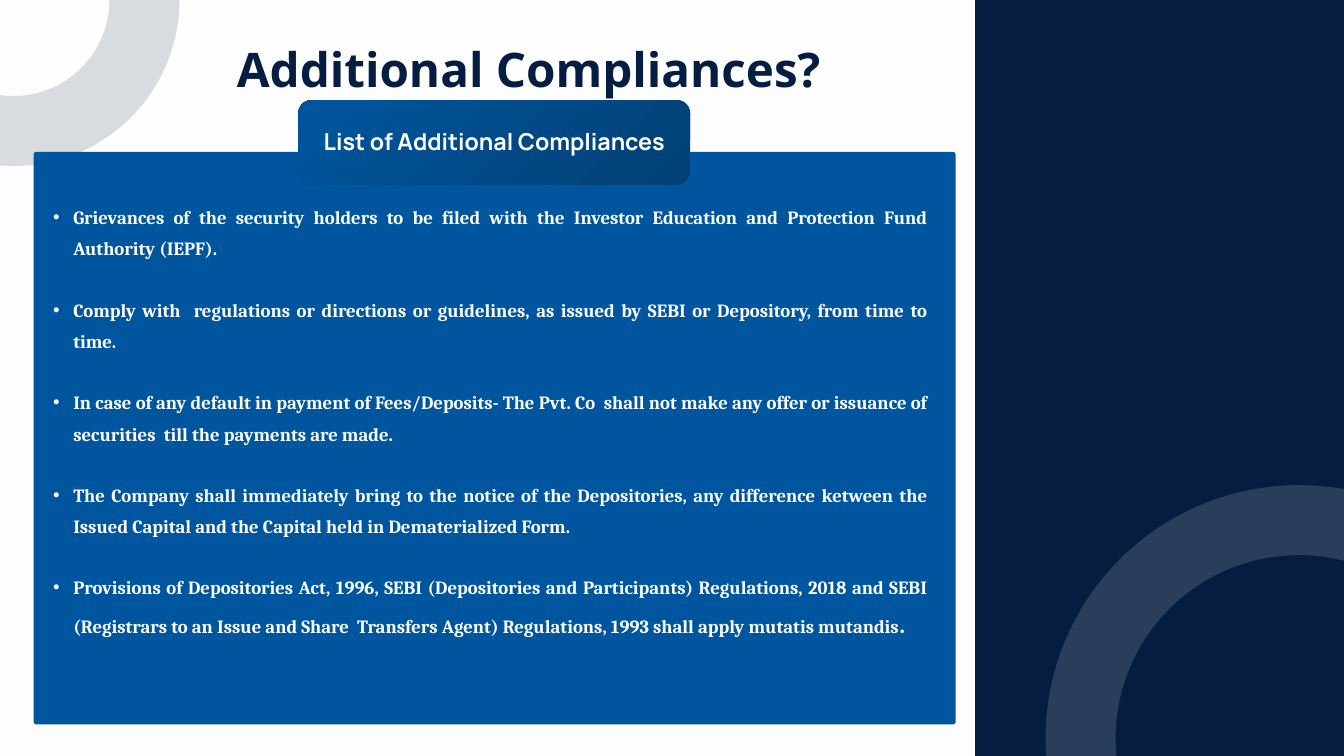
from lxml import etree
from pptx import Presentation
from pptx.dml.color import RGBColor
from pptx.enum.shapes import MSO_SHAPE
from pptx.enum.text import MSO_ANCHOR, PP_ALIGN
from pptx.oxml.ns import qn
from pptx.util import Inches, Pt

RECTANGLE, ROUNDED, OVAL = MSO_SHAPE.RECTANGLE, MSO_SHAPE.ROUNDED_RECTANGLE, MSO_SHAPE.OVAL
TOP, MIDDLE = MSO_ANCHOR.TOP, MSO_ANCHOR.MIDDLE
CENTER, JUSTIFY = PP_ALIGN.CENTER, PP_ALIGN.JUSTIFY

NAVY = RGBColor(0x05, 0x1D, 0x40)
BLUE = RGBColor(0x00, 0x56, 0x9E)
DEEP_BLUE = RGBColor(0x01, 0x40, 0x74)
OFF_WHITE = RGBColor(0xFD, 0xFD, 0xFD)
WHITE = RGBColor(0xFF, 0xFF, 0xFF)

WIDTH, HEIGHT = 20, 11.25
LINE_SPACING = 1.4
BULLET_GAP = 32
RING_WIDTH, RING_OPACITY = 75, 15

# Boxes are left, top, width, height in inches
SIDE_BAND = (14.51, 0, WIDTH - 14.51, HEIGHT)
TITLE_BOX = (1.74, 0.26, 12.26, 0.96)
TOP_RING = (-1.75, -1.95, 3.9, 3.9)
BOTTOM_RING = (16.08, 7.74, 6.5, 6.5)
PANEL = (0.5, 2.26, 13.72, 8.52)
HEADING = (4.44, 1.49, 5.83, 1.26)

# Each item is a list of (text, size) runs
COMPLIANCES = [
    [("Grievances of the security holders to be filed with the Investor Education "
      "and Protection Fund Authority (IEPF).", 20)],
    [("Comply with  regulations or directions or guidelines, as issued by SEBI or "
      "Depository, from time to time.", 20)],
    [("In case of any default in payment of Fees/Deposits- The Pvt. Co  shall not make "
      "any offer or issuance of securities  till the payments are made.", 20)],
    [("The Company shall immediately bring to the notice of the Depositories, any "
      "difference ketween the Issued Capital and the Capital held in Dematerialized Form.", 20)],
    [("Provisions of Depositories Act, 1996, SEBI (Depositories and Participants) "
      "Regulations, 2018 and SEBI (Registrars to an Issue and Share  Transfers Agent) "
      "Regulations, 1993 shall apply mutatis mutandis", 20), (".", 25.1)],
]


def add_plain_shape(slide, kind, box, color=None, radius=None):
    """Add a shape without shadow or outline; radius is in inches."""
    shape = slide.shapes.add_shape(kind, *map(Inches, box))
    shape.shadow.inherit = False
    shape.line.fill.background()
    if color is None:
        shape.fill.background()
    else:
        shape.fill.solid()
        shape.fill.fore_color.rgb = color
    if radius is not None:
        shape.adjustments[0] = radius / min(box[2:])
    return shape


def prepare_frame(shape, anchor):
    frame = shape.text_frame
    frame.word_wrap = True
    frame.vertical_anchor = anchor
    frame.margin_left = frame.margin_right = frame.margin_top = frame.margin_bottom = 0
    return frame


def write_paragraph(paragraph, runs, font, color, alignment):
    paragraph.alignment = alignment
    paragraph.line_spacing = LINE_SPACING
    for text, size in runs:
        run = paragraph.add_run()
        run.text = text
        run.font.name = font
        run.font.size = Pt(size)
        run.font.bold = True
        run.font.color.rgb = color


def add_bullet(paragraph, indent, hanging, color):
    properties = paragraph._p.get_or_add_pPr()
    properties.set("marL", str(Inches(indent)))
    properties.set("indent", str(-Inches(hanging)))
    bullet_color = etree.SubElement(properties, qn("a:buClr"))
    etree.SubElement(bullet_color, qn("a:srgbClr"), val=str(color))
    etree.SubElement(properties, qn("a:buFont"), typeface="Arial")
    etree.SubElement(properties, qn("a:buChar"), char="•")


def add_ring(slide, box, color):
    ring = add_plain_shape(slide, OVAL, box)
    ring.line.color.rgb = color
    ring.line.width = Pt(RING_WIDTH)
    color_element = ring.line._ln.find(".//" + qn("a:srgbClr"))
    etree.SubElement(color_element, qn("a:alpha"), val=str(RING_OPACITY * 1000))


def add_title(slide, box):
    title = slide.shapes.title
    title.left, title.top, title.width, title.height = map(Inches, box)
    frame = prepare_frame(title, TOP)
    write_paragraph(frame.paragraphs[0], [("Additional Compliances?", 51)],
                    "Open Sans", NAVY, CENTER)


def add_compliance_panel(slide, box):
    left, top, width, height = box
    add_plain_shape(slide, ROUNDED, box, BLUE, radius=0.04)
    text_box = slide.shapes.add_textbox(
        *map(Inches, (left, top + 0.67, width - 0.41, height - 1.33)))
    frame = prepare_frame(text_box, TOP)
    for index, runs in enumerate(COMPLIANCES):
        paragraph = frame.add_paragraph() if index else frame.paragraphs[0]
        write_paragraph(paragraph, runs, "Cambria", OFF_WHITE, JUSTIFY)
        if index:
            paragraph.space_before = Pt(BULLET_GAP)
        add_bullet(paragraph, 0.59, 0.3, OFF_WHITE)


def add_heading(slide, box):
    heading = add_plain_shape(slide, ROUNDED, box, BLUE, radius=0.2)
    # Radial gradient spreading from the top left corner
    heading.fill.gradient()
    for stop, color, position in zip(heading.fill.gradient_stops, (BLUE, DEEP_BLUE), (0, 1)):
        stop.color.rgb = color
        stop.position = position
    gradient = heading._element.spPr.find(qn("a:gradFill"))
    gradient.remove(gradient.find(qn("a:lin")))
    radial = etree.SubElement(gradient, qn("a:path"), {"path": "circle"})
    etree.SubElement(radial, qn("a:fillToRect"), r="100000", b="100000")

    frame = prepare_frame(heading, MIDDLE)
    frame.margin_bottom = Inches(0.2)
    write_paragraph(frame.paragraphs[0], [("List of Additional Compliances", 24.9)],
                    "Manrope", WHITE, CENTER)


def main():
    presentation = Presentation()
    presentation.slide_width, presentation.slide_height = Inches(WIDTH), Inches(HEIGHT)
    slide = presentation.slides.add_slide(presentation.slide_layouts[5])
    slide.background.fill.solid()
    slide.background.fill.fore_color.rgb = OFF_WHITE

    # Decoration
    add_plain_shape(slide, RECTANGLE, SIDE_BAND, NAVY)
    add_ring(slide, TOP_RING, NAVY)
    add_ring(slide, BOTTOM_RING, WHITE)

    # Content
    add_title(slide, TITLE_BOX)
    add_compliance_panel(slide, PANEL)
    add_heading(slide, HEADING)
    presentation.save("out.pptx")


if __name__ == "__main__":
    main()
